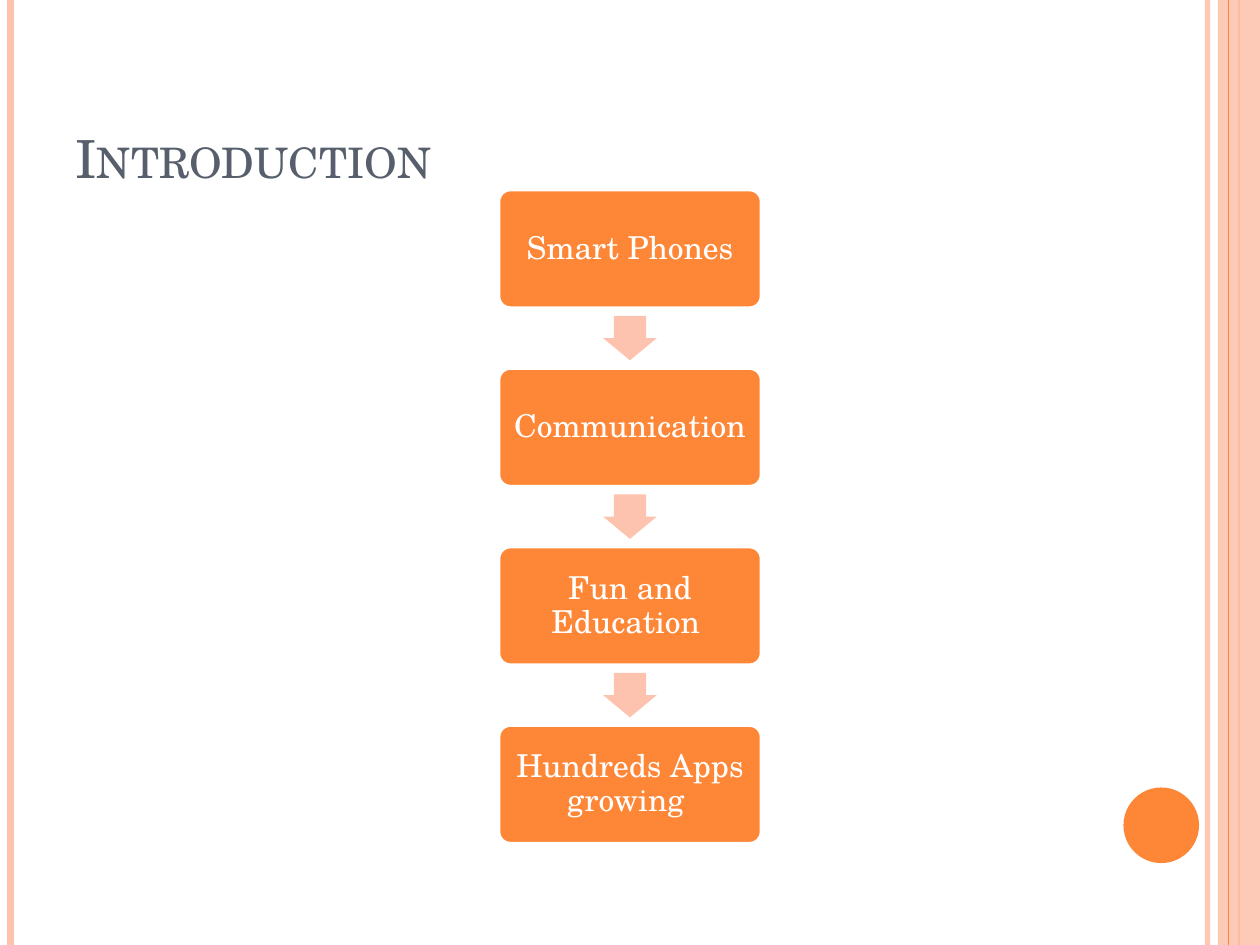
from lxml.etree import SubElement
from pptx import Presentation
from pptx.dml.color import RGBColor
from pptx.enum.shapes import MSO_CONNECTOR, MSO_SHAPE
from pptx.enum.text import MSO_ANCHOR, MSO_AUTO_SIZE, PP_ALIGN
from pptx.oxml.ns import qn
from pptx.util import Pt

FONT = "TeX Gyre Schola"
ORANGE = RGBColor(0xFE, 0x86, 0x37)
PEACH = RGBColor(0xFE, 0xC3, 0xAE)
SLATE = RGBColor(0x57, 0x5F, 0x6D)
WHITE = RGBColor(0xFF, 0xFF, 0xFF)

PAGE_WIDTH, PAGE_HEIGHT = 720, 540
STEPS = ["Smart Phones", "Communication ", "Fun and Education ", "Hundreds Apps growing "]
STEP_WIDTH, STEP_HEIGHT = 150.2, 67.7
STEP_TOP, STEP_PITCH = 108.4, 102
ARROW_WIDTH, ARROW_HEIGHT = 30.6, 25.4


def set_opacity(element, percent):
    """Make the solid colour inside an element partly transparent."""
    colour = next(element.iter(qn("a:srgbClr")))
    SubElement(colour, qn("a:alpha"), val=str(percent * 1000))


def add_stripe(page, x, colour, weight, opacity=100):
    """Draw a full-height vertical line."""
    stripe = page.shapes.add_connector(MSO_CONNECTOR.STRAIGHT, Pt(x), Pt(0), Pt(x), Pt(PAGE_HEIGHT))
    stripe.line.color.rgb = colour
    stripe.line.width = Pt(weight)
    properties = stripe._element.spPr
    if opacity < 100:
        set_opacity(properties, opacity)
    SubElement(properties, qn("a:effectLst"))


def add_filled_shape(page, kind, left, top, width, height, colour):
    """Add a flat preset shape without outline or shadow."""
    shape = page.shapes.add_shape(kind, Pt(left), Pt(top), Pt(width), Pt(height))
    shape.shadow.inherit = False
    shape.fill.solid()
    shape.fill.fore_color.rgb = colour
    shape.line.fill.background()
    return shape


def format_text(para, size, colour):
    """Set font, size and colour on every run of a paragraph."""
    for span in para.runs:
        span.font.name = FONT
        span.font.size = Pt(size)
        span.font.color.rgb = colour


def add_decoration(page):
    """Draw the side stripes, the right band and the corner disc."""
    add_stripe(page, 690, PEACH, 3, opacity=93)
    add_stripe(page, 6, PEACH, 4.5)
    add_stripe(page, 708, ORANGE, 1.5)
    band = add_filled_shape(page, MSO_SHAPE.RECTANGLE, 696, 0, 24, PAGE_HEIGHT, PEACH)
    set_opacity(band._element.spPr, 87)
    add_stripe(page, 702, ORANGE, 0.75)
    add_filled_shape(page, MSO_SHAPE.OVAL, 642, 450, 43.2, 43.2, ORANGE)


def set_title(page, text):
    """Place the title and set it in small capitals."""
    title = page.shapes.title
    title.left, title.top, title.width, title.height = Pt(36), Pt(21.6), Pt(588), Pt(90)
    frame = title.text_frame
    frame.text = text
    frame.auto_size = MSO_AUTO_SIZE.NONE
    frame.vertical_anchor = MSO_ANCHOR.BOTTOM
    para = frame.paragraphs[0]
    para.alignment = PP_ALIGN.LEFT
    format_text(para, 30, SLATE)
    para.runs[0].font._element.set("cap", "small")


def add_step(page, text, top):
    """Add one rounded box of the flow."""
    left = (PAGE_WIDTH - STEP_WIDTH) / 2
    box = add_filled_shape(page, MSO_SHAPE.ROUNDED_RECTANGLE, left, top, STEP_WIDTH, STEP_HEIGHT, ORANGE)
    box.adjustments[0] = 0.1
    box.line.color.rgb = WHITE
    box.line.width = Pt(2)
    frame = box.text_frame
    frame.text = text
    frame.word_wrap = True
    frame.vertical_anchor = MSO_ANCHOR.MIDDLE
    frame.margin_left = frame.margin_right = Pt(5)
    frame.margin_top = frame.margin_bottom = Pt(5)
    para = frame.paragraphs[0]
    para.alignment = PP_ALIGN.CENTER
    para.line_spacing = 0.9
    format_text(para, 18, WHITE)


def add_arrow(page, centre):
    """Add a down arrow centred on a height."""
    arrow = add_filled_shape(page, MSO_SHAPE.DOWN_ARROW, (PAGE_WIDTH - ARROW_WIDTH) / 2,
                             centre - ARROW_HEIGHT / 2, ARROW_WIDTH, ARROW_HEIGHT, PEACH)
    arrow.adjustments[0] = 0.6
    arrow.adjustments[1] = 0.5


def main():
    """Build and save the slide."""
    deck = Presentation()
    deck.slide_width, deck.slide_height = Pt(PAGE_WIDTH), Pt(PAGE_HEIGHT)
    page = deck.slides.add_slide(deck.slide_layouts[5])
    add_decoration(page)
    set_title(page, "Introduction")
    for index, text in enumerate(STEPS):
        top = STEP_TOP + index * STEP_PITCH
        if index:
            add_arrow(page, top - (STEP_PITCH - STEP_HEIGHT) / 2)
        add_step(page, text, top)
    deck.save("out.pptx")


if __name__ == "__main__":
    main()
